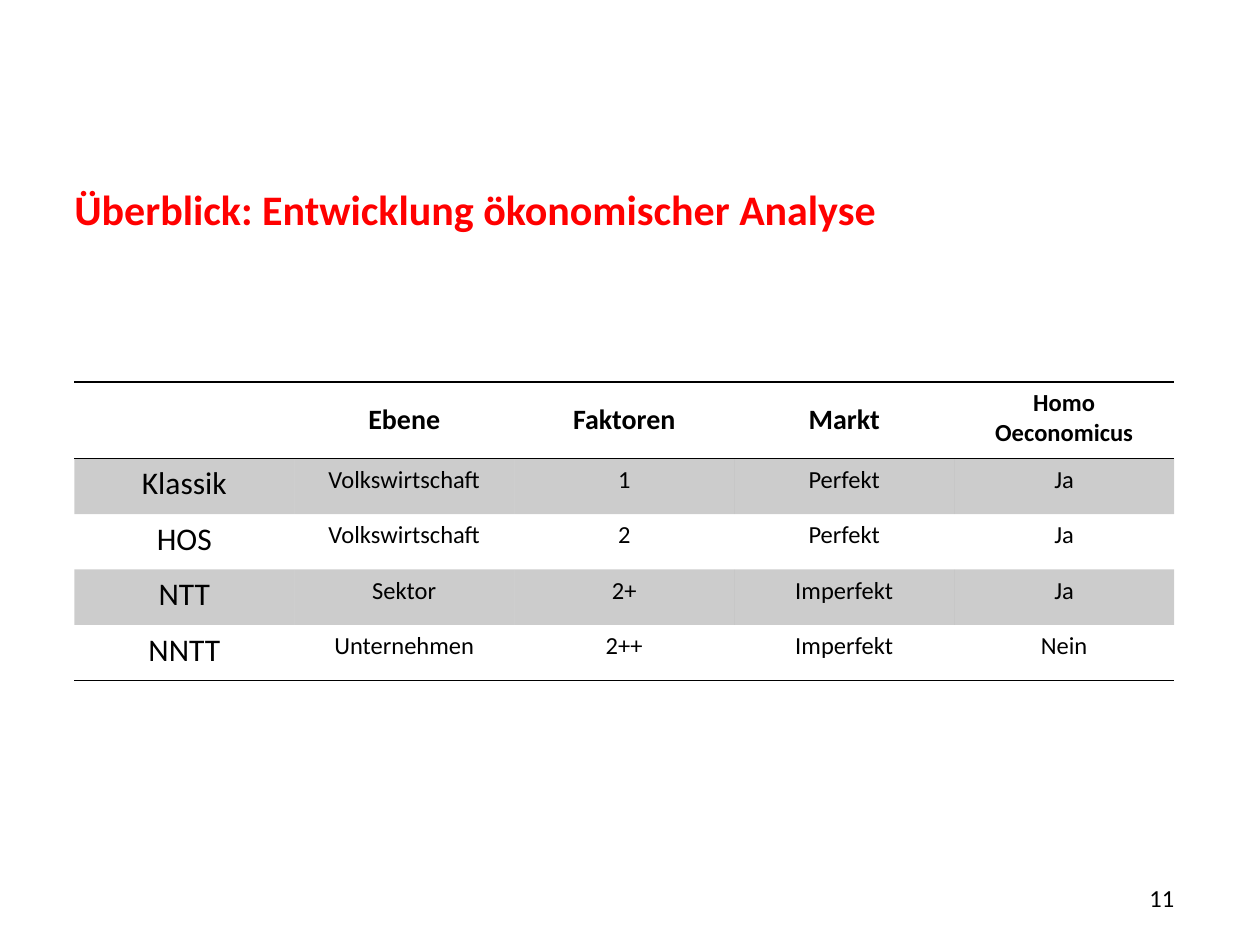
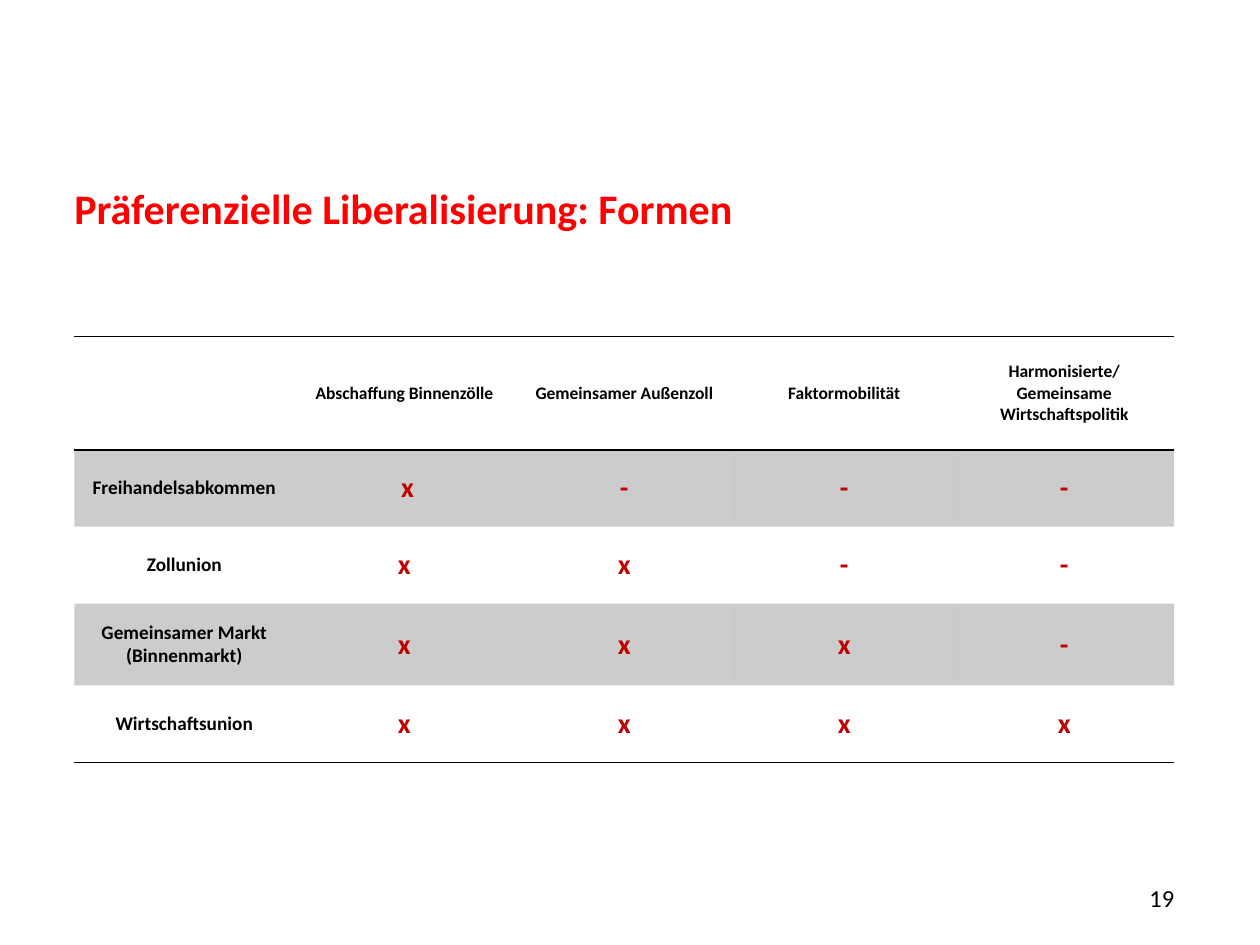
"""Build two slides, each with a red title, a ruled table and a page number."""
from lxml.etree import SubElement
from pptx import Presentation
from pptx.dml.color import RGBColor
from pptx.enum.text import MSO_ANCHOR, PP_ALIGN
from pptx.oxml.ns import qn
from pptx.util import Inches, Pt

BLACK, RED, DARK = "000000", "FF0000", "C00000"
PLAIN = "{2D5ABB26-0587-4C30-8999-92F81FD0307C}"
LEFT, WIDE = 0.59, 8.73
TOP, MID = MSO_ANCHOR.TOP, MSO_ANCHOR.MIDDLE


def style(frame, size, color, bold, align):
    for para in frame.paragraphs:
        para.alignment = align
        for run in para.runs:
            run.font.name = "Calibri"
            run.font.size = Pt(size)
            run.font.bold = bold
            run.font.color.rgb = RGBColor.from_string(color)


def label(slide, text, box, size, color, bold, align, anchor):
    frame = slide.shapes.add_textbox(*map(Inches, box)).text_frame
    frame.word_wrap = True
    frame.margin_left = frame.margin_right = 0
    frame.margin_top = frame.margin_bottom = 0
    frame.vertical_anchor = anchor
    frame.text = text
    style(frame, size, color, bold, align)
    return frame


pages = [
    {
        "title": "Überblick: Entwicklung ökonomischer Analyse",
        "title_top": 1.44,
        "page": "11",
        "top": 3.03,
        "heights": [0.61, 0.44, 0.44, 0.44, 0.44],
        "heads": [16, 16, 16, 16, 14],
        "name": (18, BLACK, False),
        "value": (14, BLACK, False),
        "anchor": TOP,
        "rows": [
            ["", "Ebene", "Faktoren", "Markt", "Homo Oeconomicus"],
            ["Klassik", "Volkswirtschaft", "1", "Perfekt", "Ja"],
            ["HOS", "Volkswirtschaft", "2", "Perfekt", "Ja"],
            ["NTT", "Sektor", "2+", "Imperfekt", "Ja"],
            ["NNTT", "Unternehmen", "2++", "Imperfekt", "Nein"],
        ],
    },
    {
        "title": "Präferenzielle Liberalisierung: Formen",
        "title_top": 1.43,
        "page": "19",
        "top": 2.67,
        "heights": [0.9, 0.61, 0.61, 0.65, 0.61],
        "heads": [10] * 5,
        "name": (11, BLACK, True),
        "value": (16, DARK, True),
        "anchor": MID,
        "rows": [
            ["", "Abschaffung Binnenzölle", "Gemeinsamer Außenzoll",
             "Faktormobilität", "Harmonisierte/ Gemeinsame Wirtschaftspolitik"],
            ["Freihandelsabkommen", " x", "-", "-", "-"],
            ["Zollunion", "x", "x", "-", "-"],
            ["Gemeinsamer Markt\n(Binnenmarkt)", "x", "x", "x", "-"],
            ["Wirtschaftsunion", "x", "x", "x", "x"],
        ],
    },
]

deck = Presentation()
deck.slide_width, deck.slide_height = Inches(10), Inches(7.5)

for page in pages:
    slide = deck.slides.add_slide(deck.slide_layouts[6])
    title = label(slide, page["title"], (LEFT, page["title_top"], WIDE, 0.64),
                  24, RED, True, PP_ALIGN.LEFT, TOP)
    title.paragraphs[0].line_spacing = Pt(30)

    rows = page["rows"]
    last = len(rows) - 1
    holder = slide.shapes.add_table(
        len(rows), len(rows[0]), Inches(LEFT), Inches(page["top"]),
        Inches(WIDE), Inches(sum(page["heights"])))
    next(holder.element.iter(qn("a:tableStyleId"))).text = PLAIN
    table = holder.table
    table.first_row = table.horz_banding = False

    for r, row in enumerate(rows):
        table.rows[r].height = Inches(page["heights"][r])
        for c, text in enumerate(row):
            cell = table.cell(r, c)
            cell.text_frame.text = text
            if r == 0:
                look = page["heads"][c], BLACK, True
                centred = page["heads"][c] == page["heads"][0]
                cell.vertical_anchor = MID if centred else TOP
            else:
                look = page["value"] if c else page["name"]
                cell.vertical_anchor = page["anchor"]
            style(cell.text_frame, *look, PP_ALIGN.CENTER)

            sides = {0: ["a:lnT", "a:lnB"], last: ["a:lnB"]}.get(r, [])
            props = cell._tc.get_or_add_tcPr()
            for side in sides:
                line = SubElement(props, qn(side), w=str(Pt(1)))
                paint = SubElement(line, qn("a:solidFill"))
                SubElement(paint, qn("a:srgbClr"), val=BLACK)

            if r % 2:
                cell.fill.solid()
                cell.fill.fore_color.rgb = RGBColor.from_string(BLACK)
                tint = next(props.find(qn("a:solidFill")).iter(qn("a:srgbClr")))
                SubElement(tint, qn("a:alpha"), val="20000")
            else:
                cell.fill.background()

    label(slide, page["page"], (8.27, 6.98, 1.05, 0.29),
          14, BLACK, False, PP_ALIGN.RIGHT, MID)

deck.save("out.pptx")
